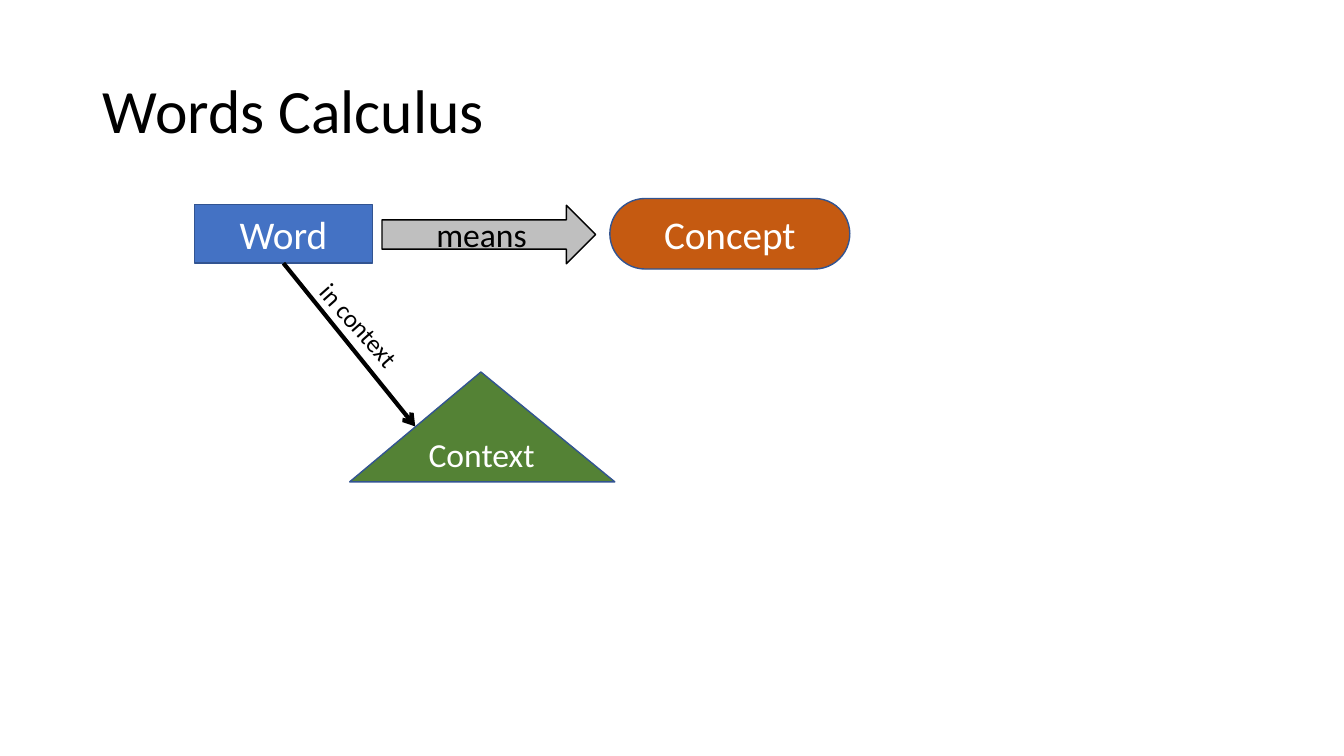
import pptx
import pptx.util
import pptx.dml.color
import pptx.enum.shapes
import pptx.enum.text
import pptx.oxml.ns
import lxml.etree

Pt = pptx.util.Pt
SHAPE = pptx.enum.shapes.MSO_SHAPE
ALIGN = pptx.enum.text.PP_ALIGN
MIDDLE = pptx.enum.text.MSO_ANCHOR.MIDDLE


def colour(hex_string):
    return pptx.dml.color.RGBColor.from_string(hex_string)


def write(box, text, size, text_colour, align):
    frame = box.text_frame
    frame.vertical_anchor = MIDDLE
    para = frame.paragraphs[0]
    para.alignment = align
    span = para.add_run()
    span.text = text
    formats = {"name": "Calibri", "size": Pt(size), "bold": False}
    for key, value in formats.items():
        setattr(span.font, key, value)
    span.font.color.rgb = colour(text_colour)
    return para


deck = pptx.Presentation()
deck.slide_width, deck.slide_height = Pt(960), Pt(540)
page = deck.slides.add_slide(deck.slide_layouts[5])

# Title
title = page.shapes.title
place = {"left": 66.24, "top": 28.8, "width": 828, "height": 104.4}
for key, value in place.items():
    setattr(title, key, Pt(value))
write(title, "Words Calculus", 44, "000000", ALIGN.LEFT).line_spacing = 0.9

# Diagram shapes: kind, left, top, width, height, adjustment, fill, line, size, text colour
nodes = {
    "Word": (SHAPE.RECTANGLE, 138.8, 146.2, 127.4, 41.8, None, "4472C4", "325491", 28, "FFFFFF"),
    "Context": (SHAPE.ISOSCELES_TRIANGLE, 249.8, 265.7, 189.4, 78.5, 0.495, "548235", "325491", 24, "FFFFFF"),
    "means": (SHAPE.RIGHT_ARROW, 272.9, 146.6, 152.6, 41.8, None, "BFBFBF", "000000", 24, "000000"),
    "Concept": (SHAPE.ROUNDED_RECTANGLE, 435.6, 141.8, 171.4, 50.4, 0.5, "C55A11", "325491", 28, "FFFFFF"),
}
boxes = {}
for text, (kind, left, top, width, height, adjustment, fill, line, size, text_colour) in nodes.items():
    box = page.shapes.add_shape(kind, Pt(left), Pt(top), Pt(width), Pt(height))
    box.shadow.inherit = False
    if adjustment is not None:
        box.adjustments[0] = adjustment
    box.fill.solid()
    box.fill.fore_color.rgb = colour(fill)
    box.line.color.rgb = colour(line)
    box.line.width = Pt(1)
    write(box, text, size, text_colour, ALIGN.CENTER)
    boxes[text] = box

# Arrow from the word to the slope of the context triangle
arrow = page.shapes.add_connector(
    pptx.enum.shapes.MSO_CONNECTOR.STRAIGHT, Pt(202.5), Pt(188), Pt(296.6), Pt(304.6))
arrow.begin_connect(boxes["Word"], 2)
arrow.line.color.rgb = colour("000000")
arrow.line.width = Pt(3)
qn = pptx.oxml.ns.qn
lxml.etree.SubElement(arrow.line._get_or_add_ln(), qn("a:tailEnd"), type="arrow")
lxml.etree.SubElement(arrow._element.spPr, qn("a:effectLst"))

# Label along the arrow
label = page.shapes.add_textbox(Pt(213.1), Pt(218.2), Pt(87.8), Pt(28.8))
label.rotation = 48.4
label.text_frame.word_wrap = False
label.text_frame.auto_size = pptx.enum.text.MSO_AUTO_SIZE.SHAPE_TO_FIT_TEXT
write(label, "in context", 18, "000000", ALIGN.LEFT)

deck.save("out.pptx")
